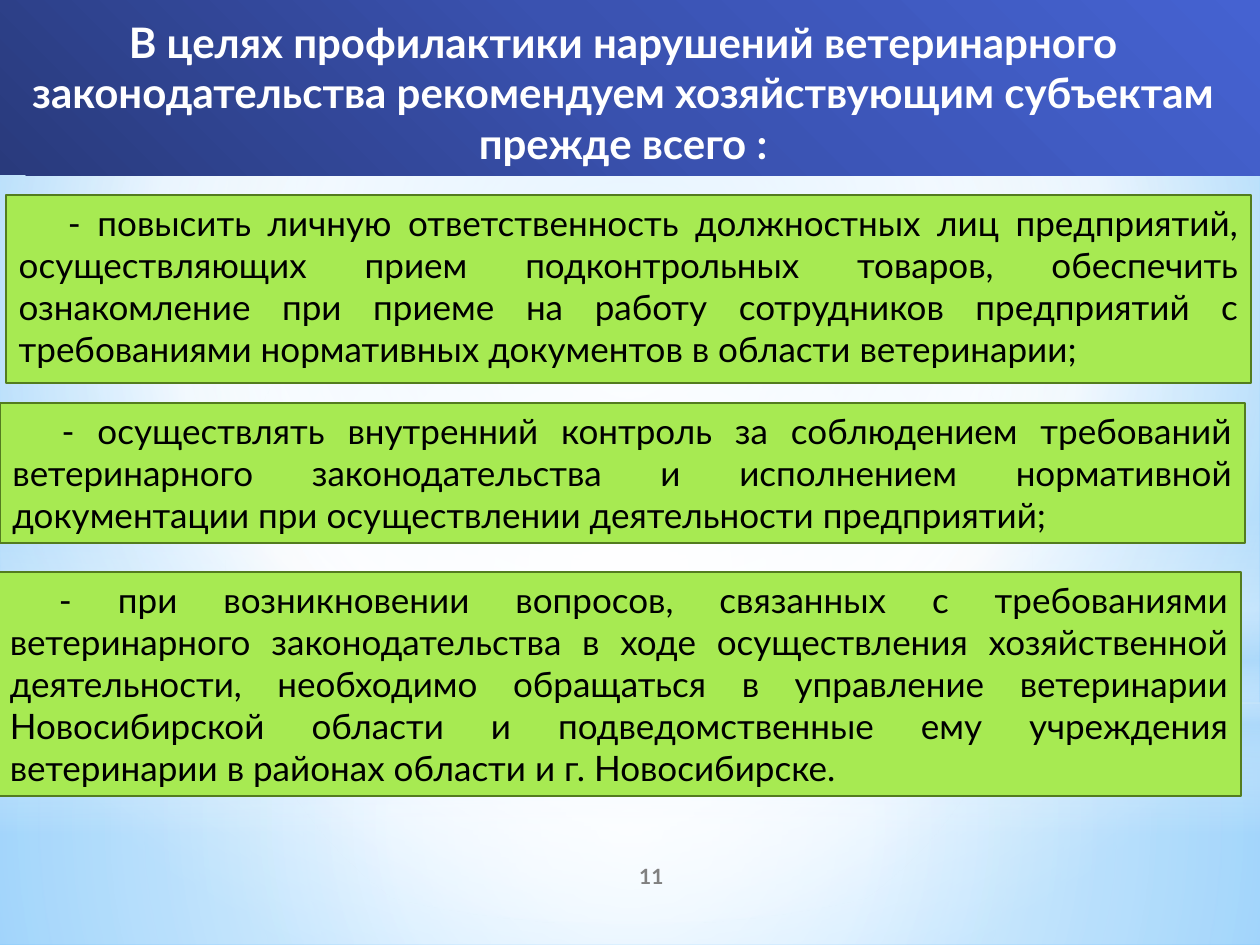
from dataclasses import dataclass

from lxml.etree import SubElement
from pptx import Presentation
from pptx.dml.color import RGBColor
from pptx.enum.shapes import MSO_SHAPE
from pptx.enum.text import MSO_ANCHOR, PP_ALIGN
from pptx.oxml.ns import qn
from pptx.util import Inches, Pt

COLS, ROWS = 100, 75  # grid over the slide
CELL = Inches(0.1)
CENTER = (50, 50, 50, 50)


@dataclass(frozen=True)
class Theme:
    font: str = "Lato"
    white: str = "FFFFFF"
    sky: str = "B4DCFA"
    ink: str = "000000"
    grey: str = "808080"
    green: str = "A7EA52"
    green_line: str = "537C1F"
    title_size: int = 24
    body_size: int = 20
    number_size: int = 12
    page: tuple = ((0, "9ED5FF"), (60, "FFFFFF"), (100, "5BB9FF"))
    banner: tuple = ((0, "293A7C"), (50, "3A52B0"), (100, "4562D1"))


THEME = Theme()

RECOMMENDATIONS = [
    ((0.5, 15.5, 98.8, 14.9),
     "- повысить личную ответственность должностных лиц предприятий, осуществляющих "
     "прием подконтрольных товаров, обеспечить ознакомление при приеме на работу "
     "сотрудников предприятий с требованиями нормативных документов в области ветеринарии;"),
    ((0, 32, 98.8, 11.1),
     "- осуществлять внутренний контроль за соблюдением требований ветеринарного "
     "законодательства и исполнением нормативной документации при осуществлении "
     "деятельности предприятий;"),
    ((-0.2, 45.4, 98.7, 17.8),
     "- при возникновении вопросов, связанных с требованиями ветеринарного "
     "законодательства в ходе осуществления хозяйственной деятельности, необходимо "
     "обращаться в управление ветеринарии Новосибирской области и подведомственные ему "
     "учреждения ветеринарии в районах области и г. Новосибирске."),
]


def place(box):
    return [int(v * CELL) for v in box]


def set_gradient(props, stops, angle=None, focus=CENTER):
    """Swap the solid fill in props for a linear or circular gradient.

    A stop is (position, colour) or (position, colour, opacity), in percent.
    """
    solid = props.find(qn("a:solidFill"))
    grad = props.makeelement(qn("a:gradFill"), {"rotWithShape": "1"})
    props.replace(solid, grad)
    stop_list = SubElement(grad, qn("a:gsLst"))
    for pos, color, *opacity in stops:
        gs = SubElement(stop_list, qn("a:gs"), pos=str(pos * 1000))
        clr = SubElement(gs, qn("a:srgbClr"), val=color)
        if opacity:
            SubElement(clr, qn("a:alpha"), val=str(opacity[0] * 1000))
    if angle is not None:
        SubElement(grad, qn("a:lin"), ang=str(angle * 60000), scaled="0")
    else:
        path = SubElement(grad, qn("a:path"), path="circle")
        sides = {side: str(v * 1000) for side, v in zip("ltrb", focus)}
        SubElement(path, qn("a:fillToRect"), sides)


def add_panel(s, box, color, line=None, kind=MSO_SHAPE.RECTANGLE):
    sp = s.shapes.add_shape(kind, *place(box))
    sp.shadow.inherit = False
    sp.fill.solid()
    sp.fill.fore_color.rgb = RGBColor.from_string(color)
    if line:
        sp.line.color.rgb = RGBColor.from_string(line)
        sp.line.width = Pt(1.25)
    else:
        sp.line.fill.background()
    return sp


def add_gradient_panel(s, box, stops, angle=None, kind=MSO_SHAPE.RECTANGLE):
    sp = add_panel(s, box, THEME.white, kind=kind)
    set_gradient(sp.element.spPr, stops, angle)


def write(sp, text, size, color, bold=False, align=PP_ALIGN.CENTER, anchor=MSO_ANCHOR.TOP):
    tf = sp.text_frame
    tf.word_wrap = True
    tf.vertical_anchor = anchor
    tf.text = text
    p = tf.paragraphs[0]
    p.alignment = align
    font = p.runs[0].font
    font.name, font.size, font.bold = THEME.font, Pt(size), bold
    font.color.rgb = RGBColor.from_string(color)
    return p


def add_label(s, box, text, size, color, anchor=MSO_ANCHOR.TOP):
    tb = s.shapes.add_textbox(*place(box))
    write(tb, text, size, color, bold=True, anchor=anchor)


def add_recommendation(s, box, text):
    sp = add_panel(s, box, THEME.green, THEME.green_line)
    p = write(sp, text, THEME.body_size, THEME.ink, align=PP_ALIGN.JUSTIFY)
    p.space_after = Pt(3)
    pPr = p._p.get_or_add_pPr()
    pPr.set("marL", "0")
    pPr.set("indent", str(Inches(0.39)))


def add_backdrop(s):
    white, sky = THEME.white, THEME.sky
    s.background.fill.solid()
    bg = s.element.xpath("p:cSld/p:bg/p:bgPr")[0]
    set_gradient(bg, THEME.page, focus=(20, 10, 20, 60))
    # Soft light layers
    add_gradient_panel(s, (0, 55.8, COLS, ROWS - 55.8),
                       [(0, white, 91), (37, white, 76), (100, sky, 79)])
    add_gradient_panel(s, (0, 0, COLS, 55.8),
                       [(0, white, 89), (48, white, 62), (100, sky, 79)])
    add_gradient_panel(s, (0, 41.2, COLS, 25),
                       [(0, white, 0), (29, white, 30), (45, sky, 40),
                        (55, white, 26), (65, sky, 60), (100, white, 0)], angle=90)
    add_gradient_panel(s, (0, 17.5, COLS, 55.8),
                       [(0, white, 100), (56, white, 0)], kind=MSO_SHAPE.OVAL)


def main():
    prs = Presentation()
    prs.slide_width, prs.slide_height = COLS * CELL, ROWS * CELL
    s = prs.slides.add_slide(prs.slide_layouts[6])
    add_backdrop(s)

    # Title banner
    add_gradient_panel(s, (-0.2, 0, COLS + 0.2, 13.9), THEME.banner, angle=315)
    add_label(s, (0, 0.8, 98.9, 14.6),
              "В целях профилактики нарушений ветеринарного законодательства "
              "рекомендуем хозяйствующим субъектам прежде всего :",
              THEME.title_size, THEME.white)

    # Slide number
    add_label(s, (41.7, 67.5, 20, 4), "11", THEME.number_size, THEME.grey, MSO_ANCHOR.MIDDLE)

    # Recommendations
    for box, text in RECOMMENDATIONS:
        add_recommendation(s, box, text)

    prs.save("out.pptx")


if __name__ == "__main__":
    main()
